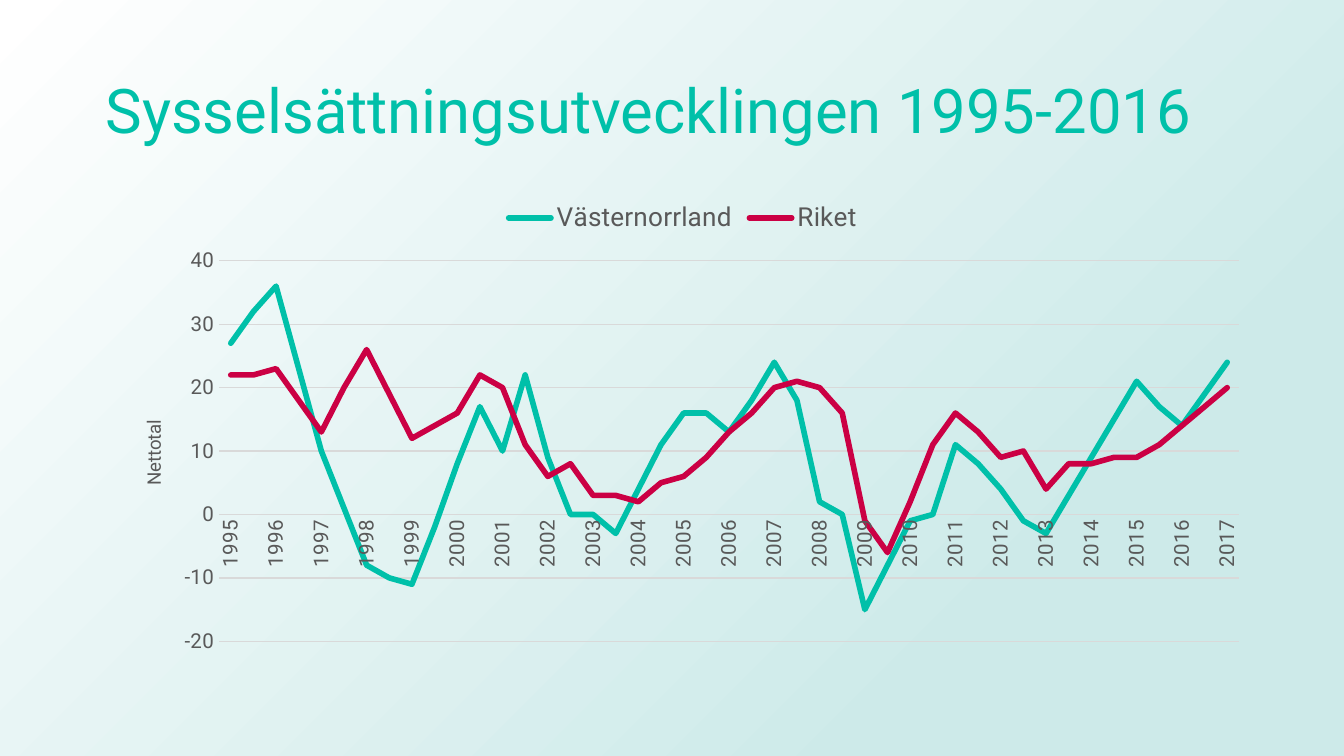
from lxml import etree
from pptx import Presentation
from pptx.chart.data import CategoryChartData
from pptx.dml.color import RGBColor
from pptx.enum.chart import XL_CHART_TYPE, XL_LEGEND_POSITION, XL_MARKER_STYLE, XL_TICK_MARK
from pptx.enum.shapes import MSO_SHAPE
from pptx.enum.text import MSO_ANCHOR
from pptx.oxml import parse_xml
from pptx.oxml.ns import qn
from pptx.util import Pt

LINE_CHART = XL_CHART_TYPE.LINE
LEGEND_TOP = XL_LEGEND_POSITION.TOP
NO_MARKER = XL_MARKER_STYLE.NONE
NO_TICK = XL_TICK_MARK.NONE
RECTANGLE = MSO_SHAPE.RECTANGLE
MIDDLE = MSO_ANCHOR.MIDDLE

FONT = "Roboto"
TEAL, RED, GREY, GRID = "00C0A9", "CB0044", "595959", "D9D9D9"
VERTICAL = "-5400000"
WIDTH, HEIGHT = 720, 405

# Two values per year, the last year has one
YEARS = [str(1995 + half // 2) for half in range(45)]
SERIES = [
    ("Västernorrland", TEAL,
     [27, 32, 36, 23, 10, 1, -8, -10, -11, -2, 8, 17, 10, 22, 9,
      0, 0, -3, 4, 11, 16, 16, 13, 18, 24, 18, 2, 0, -15, -8,
      -1, 0, 11, 8, 4, -1, -3, 3, 9, 15, 21, 17, 14, 19, 24]),
    ("Riket", RED,
     [22, 22, 23, 18, 13, 20, 26, 19, 12, 14, 16, 22, 20, 11, 6,
      8, 3, 3, 2, 5, 6, 9, 13, 16, 20, 21, 20, 16, -1, -6,
      2, 11, 16, 13, 9, 10, 4, 8, 8, 9, 9, 11, 14, 17, 20]),
]


def color(value):
    return RGBColor.from_string(value)


def format_font(font, size, shade):
    font.name = FONT
    font.size = Pt(size)
    font.bold = False
    font.color.rgb = color(shade)


def format_line(line, shade, width):
    line.color.rgb = color(shade)
    line.width = Pt(width)


def write_text(frame, text, size=12, shade=GREY, spacing=None):
    para = frame.paragraphs[0]
    if spacing:
        para.line_spacing = spacing
    span = para.add_run()
    span.text = text
    format_font(span.font, size, shade)


def add_background(page):
    box = page.shapes.add_shape(RECTANGLE, 0, 0, Pt(WIDTH), Pt(HEIGHT))
    box.shadow.inherit = False
    box.line.fill.background()
    box.fill.gradient()
    for stop, (position, shade) in zip(box.fill.gradient_stops, [(0.23, "CDEAE9"), (1, "FFFFFF")]):
        stop.position = position
        stop.color.rgb = color(shade)
    # Radial gradient spreading from the bottom right corner
    linear = box._element.spPr.find(".//" + qn("a:lin"))
    radial = etree.Element(qn("a:path"), {"path": "circle"})
    etree.SubElement(radial, qn("a:fillToRect"), {"l": "100000", "t": "100000"})
    linear.getparent().replace(linear, radial)


def add_title(page, text):
    box = page.shapes.add_textbox(Pt(49.5), Pt(21.5), Pt(621), Pt(78.5))
    box.text_frame.word_wrap = True
    box.text_frame.vertical_anchor = MIDDLE
    write_text(box.text_frame, text, size=33, shade=TEAL, spacing=0.9)


def set_layout(element, index, inner=False, **fractions):
    """Place a chart part by fractions (x, y, w, h) of the chart area."""
    for old in element.findall(qn("c:layout")):
        element.remove(old)
    layout = parse_xml('<c:layout xmlns:c="http://schemas.openxmlformats.org/'
                       'drawingml/2006/chart"><c:manualLayout/></c:layout>')
    settings = [("layoutTarget", "inner")] if inner else []
    settings += [("xMode", "edge"), ("yMode", "edge")]
    settings += [(name, str(value)) for name, value in fractions.items()]
    for name, value in settings:
        etree.SubElement(layout[0], qn("c:" + name), {"val": value})
    element.insert(index, layout)


def format_category_axis(axis):
    axis.major_tick_mark = NO_TICK
    format_font(axis.tick_labels.font, 11, GREY)
    format_line(axis.format.line, GRID, 0.75)
    axis._element.txPr.bodyPr.set("rot", VERTICAL)
    # One label per year
    skip = etree.Element(qn("c:tickLblSkip"), {"val": "2"})
    axis._element.find(qn("c:noMultiLvlLbl")).addprevious(skip)


def format_value_axis(axis, title):
    axis.minimum_scale, axis.maximum_scale, axis.major_unit = -20, 40, 10
    axis.major_tick_mark = NO_TICK
    axis.format.line.fill.background()
    format_font(axis.tick_labels.font, 11, GREY)
    axis.tick_labels.number_format = "0"
    axis.tick_labels.number_format_is_linked = False
    format_line(axis.major_gridlines.format.line, GRID, 0.75)
    frame = axis.axis_title.text_frame
    write_text(frame, title, size=10)
    frame._txBody.bodyPr.set("rot", VERTICAL)
    set_layout(axis.axis_title._element, 1, x=0.03, y=0.48)


def add_line_chart(page):
    data = CategoryChartData(number_format="0")
    data.categories = YEARS
    for name, _, values in SERIES:
        data.add_series(name, values)
    chart = page.shapes.add_chart(LINE_CHART, Pt(55.5), Pt(100), Pt(620.5), Pt(256.5), data).chart
    chart.has_title = False
    format_font(chart.font, 10, GREY)
    for series, (_, shade, _) in zip(chart.plots[0].series, SERIES):
        series.smooth = False
        series.marker.style = NO_MARKER
        format_line(series.format.line, shade, 3)
        series.format.line._get_or_add_ln().set("cap", "rnd")
    chart.plots[0].vary_by_categories = False
    # Axes, legend and plot area
    format_category_axis(chart.category_axis)
    format_value_axis(chart.value_axis, "Nettotal")
    chart.has_legend = True
    chart.legend.position = LEGEND_TOP
    chart.legend.include_in_layout = False
    format_font(chart.legend.font, 14, GREY)
    plot_area = chart._chartSpace.chart.plotArea
    set_layout(plot_area, 0, inner=True, x=0.1, y=0.155, w=0.88, h=0.795)


def main():
    deck = Presentation()
    deck.slide_width, deck.slide_height = Pt(WIDTH), Pt(HEIGHT)
    page = deck.slides.add_slide(deck.slide_layouts[6])
    add_background(page)
    add_title(page, "Sysselsättningsutvecklingen 1995-2016")
    add_line_chart(page)
    deck.save("out.pptx")


if __name__ == "__main__":
    main()
